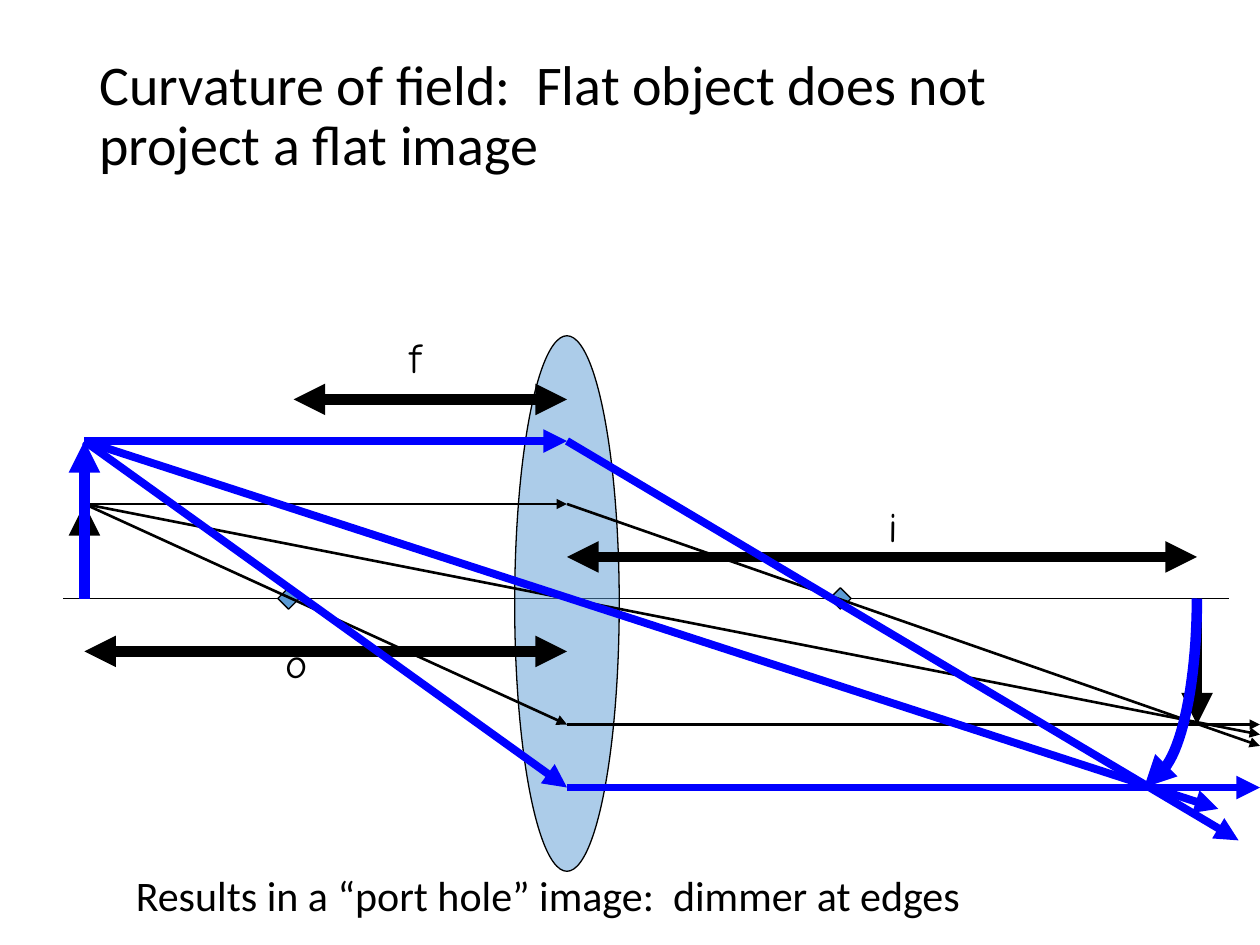
from lxml import etree
from pptx import Presentation
from pptx.dml.color import RGBColor
from pptx.enum.shapes import MSO_CONNECTOR, MSO_SHAPE
from pptx.enum.text import MSO_ANCHOR
from pptx.oxml.ns import qn
from pptx.util import Inches, Pt

LINE = MSO_CONNECTOR.STRAIGHT
OVAL = MSO_SHAPE.OVAL
DIAMOND = MSO_SHAPE.DIAMOND
TOP = MSO_ANCHOR.TOP
MIDDLE = MSO_ANCHOR.MIDDLE

BLACK, BLUE, GLASS = "000000", "0000FF", "5B9BD5"
OBJ, LENS, IMG, EDGE = 0.67, 4.5, 9.5, 10  # x of the main planes
AXIS = 4.75  # y of the optical axis


def color(code):
    return RGBColor.from_string(code)


def add_line(slide, start, end, ink=BLACK, width=1.5, head=False, tail=True):
    points = [Inches(v) for v in (*start, *end)]
    line = slide.shapes.add_connector(LINE, *points)
    line.line.color.rgb = color(ink)
    line.line.width = Pt(width)
    pen = line.line._get_or_add_ln()
    for tag, shown in (("a:headEnd", head), ("a:tailEnd", tail)):
        if shown:
            etree.SubElement(pen, qn(tag), type="triangle")
    etree.SubElement(line._element.spPr, qn("a:effectLst"))


def add_glass(slide, kind, x, y, width, height, alpha=None):
    """Place a glass-coloured shape by its centre."""
    box = (x - width / 2, y - height / 2, width, height)
    shape = slide.shapes.add_shape(kind, *[Inches(v) for v in box])
    shape.shadow.inherit = False
    shape.fill.solid()
    shape.fill.fore_color.rgb = color(GLASS)
    shape.line.color.rgb = color(BLACK)
    shape.line.width = Pt(0.75)
    if alpha:
        tint = shape._element.spPr.find(qn("a:solidFill"))[0]
        etree.SubElement(tint, qn("a:alpha"), val=str(alpha * 1000))


def add_curve(slide, a, b, c, d, ink, width, steps=24):
    """Draw a cubic curve through sampled points."""
    points = []
    for step in range(steps + 1):
        t = step / steps
        mix = ((1 - t) ** 3, 3 * t * (1 - t) ** 2, 3 * t * t * (1 - t), t ** 3)
        points.append(tuple(
            Inches(sum(m * p[k] for m, p in zip(mix, (a, b, c, d))))
            for k in (0, 1)))
    path = slide.shapes.build_freeform(*points[0])
    path.add_line_segments(points[1:], close=False)
    curve = path.convert_to_shape()
    curve.shadow.inherit = False
    curve.fill.background()
    curve.line.color.rgb = color(ink)
    curve.line.width = Pt(width)


def add_text(slide, text, box, font="Calibri", size=24, wrap=False,
             anchor=TOP, space=None):
    frame = slide.shapes.add_textbox(*[Inches(v) for v in box]).text_frame
    frame.word_wrap = wrap
    frame.vertical_anchor = anchor
    para = frame.paragraphs[0]
    para.line_spacing = space
    run = para.add_run()
    run.text = text
    run.font.name = font
    run.font.size = Pt(size)
    run.font.color.rgb = color(BLACK)


def add_rays(slide, top, low, through, bent, ink, width):
    """Draw the central, parallel and focal rays from the object's tip."""
    tip = (OBJ, top)
    for start, end in (
            (tip, through),
            (tip, (LENS, top)), ((LENS, top), bent),
            (tip, (LENS, low)), ((LENS, low), (EDGE, low))):
        add_line(slide, start, end, ink, width)


def main():
    deck = Presentation()
    deck.slide_width, deck.slide_height = Inches(10), Inches(7.5)
    slide = deck.slides.add_slide(deck.slide_layouts[6])

    # Axis, lens and focal points
    add_line(slide, (0.5, AXIS), (9.75, AXIS), width=0.75, tail=False)
    add_glass(slide, OVAL, LENS, 4.79, 0.83, 4.25, alpha=50)
    for x in (2.29, 6.67):
        add_glass(slide, DIAMOND, x, AXIS, 0.17, 0.17)

    # Small object and its flat image
    add_line(slide, (OBJ, AXIS), (OBJ, 4), width=6)
    add_rays(slide, 4, 5.75, (EDGE, 5.83), (EDGE, 5.92), BLACK, 1.5)
    add_line(slide, (IMG, AXIS), (IMG, 5.75), width=6)

    # Distances
    for left, right, y in ((2.33, LENS, 3.17), (LENS, IMG, 4.42),
                           (OBJ, LENS, 5.17)):
        add_line(slide, (left, y), (right, y), width=6, head=True)
    for text, x, y, width in (("f", 3.15, 2.58, 0.37), ("o", 2.17, 5, 0.38),
                              ("i", 6.95, 3.92, 0.3)):
        add_text(slide, text, (x, y, width, 0.57), font="Comic Neue")

    # Tall object and its curved image
    add_curve(slide, (9.17, 6.16), (9.36, 6.07), (IMG, 5.46), (IMG, AXIS),
              BLUE, 6)
    add_line(slide, (9.25, 6.08), (9.08, 6.25), BLUE, 6)
    add_line(slide, (OBJ, AXIS), (OBJ, 3.5), BLUE, 6)
    add_rays(slide, 3.5, 6.25, (9.67, 6.42), (9.83, 6.67), BLUE, 4.5)

    # Caption and title
    add_text(slide, "Results in a “port hole” image:  dimmer at edges",
             (0.98, 6.85, 6.86, 0.5), anchor=MIDDLE)
    add_text(slide,
             "Curvature of field:  Flat object does not project a flat image",
             (0.69, 0.4, 8.62, 1.45), size=32, wrap=True, space=0.9)

    deck.save("out.pptx")


if __name__ == "__main__":
    main()
